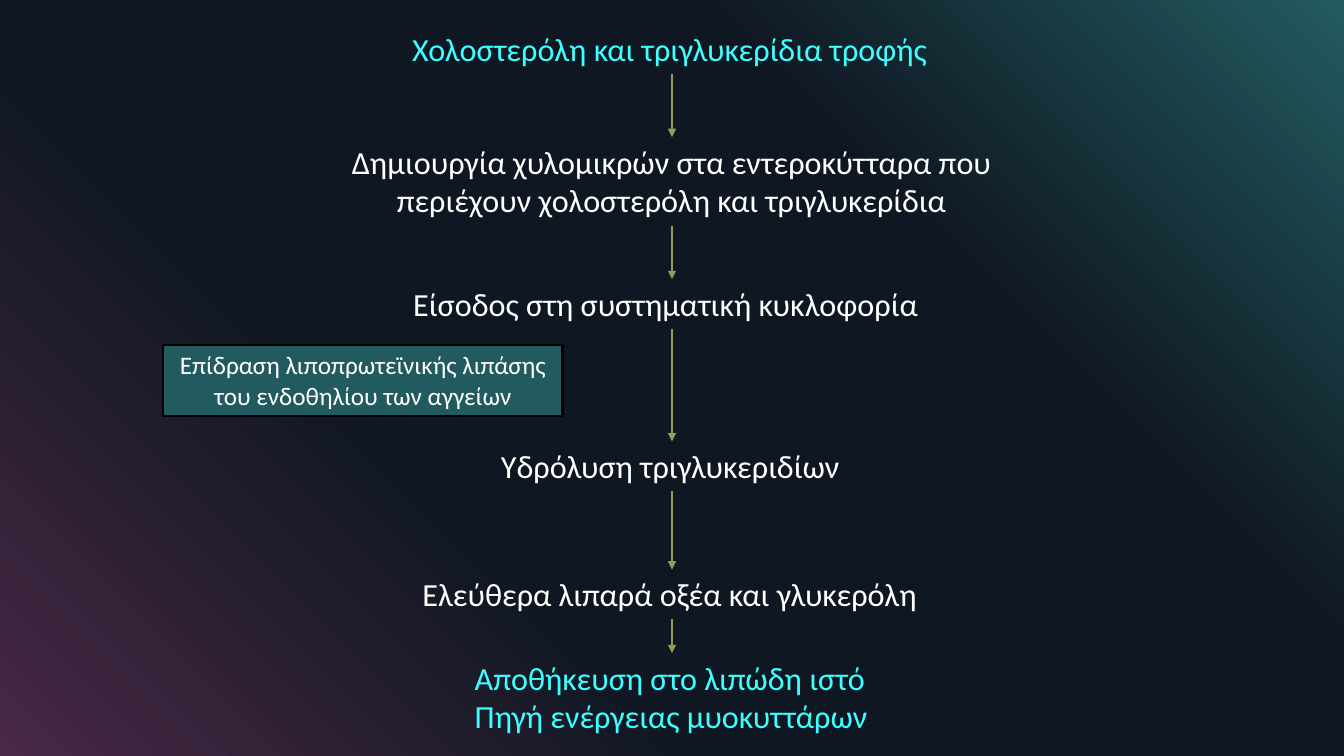
from itertools import pairwise

from lxml import etree
from pptx import Presentation
from pptx.dml.color import RGBColor
from pptx.enum.shapes import MSO_CONNECTOR, MSO_SHAPE
from pptx.enum.text import MSO_ANCHOR, MSO_AUTO_SIZE as AutoSize, PP_ALIGN as Align
from pptx.oxml.ns import qn
from pptx.util import Inches, Pt

SLIDE_W, SLIDE_H = 13.33, 7.5
CENTRE = SLIDE_W / 2
ONE_LINE, TWO_LINES = 0.49, 0.88
FONT = "Calibri"
CYAN, WHITE, TEAL, OLIVE, BLACK = "3DFFFF", "FFFFFF", "225B5F", "969959", "000000"
BACKDROP_STOPS = [(0, "482845"), (34, "0F1722"), (69, "0F1722"), (100, TEAL)]

# Each step: left, top, width, height, colour, wraps and centres, lines
STEPS = [
    (3.99, 0.24, 5.36, ONE_LINE, CYAN, False,
     ["Χολοστερόλη και τριγλυκερίδια τροφής"]),
    (3.15, 1.36, 7.03, TWO_LINES, WHITE, True,
     ["Δημιουργία χυλομικρών στα εντεροκύτταρα που περιέχουν χολοστερόλη και τριγλυκερίδια"]),
    (4.0, 2.77, 5.33, ONE_LINE, WHITE, False,
     ["Είσοδος στη συστηματική κυκλοφορία"]),
    (4.87, 4.38, 3.59, ONE_LINE, WHITE, False,
     ["Υδρόλυση τριγλυκεριδίων"]),
    (4.09, 5.65, 5.15, ONE_LINE, WHITE, False,
     ["Ελεύθερα λιπαρά οξέα και γλυκερόλη"]),
    (4.61, 6.48, 4.11, TWO_LINES, CYAN, False,
     ["Αποθήκευση στο λιπώδη ιστό", "Πηγή ενέργειας μυοκυττάρων"]),
]
ENZYME_BOX = (1.62, 3.42, 3.96, 0.71)
ENZYME = "Επίδραση λιποπρωτεϊνικής λιπάσης του ενδοθηλίου των αγγείων"


def rgb(colour):
    return RGBColor.from_string(colour)


def inches(*lengths):
    return [Inches(length) for length in lengths]


def write(shape, lines, size, colour, align, wrap):
    frame = shape.text_frame
    frame.text = "\n".join(lines)
    frame.word_wrap = wrap
    frame.auto_size = AutoSize.SHAPE_TO_FIT_TEXT
    for paragraph in frame.paragraphs:
        paragraph.alignment = align
        paragraph.font.name = FONT
        paragraph.font.size = Pt(size)
        paragraph.font.color.rgb = rgb(colour)


def add_backdrop(slide, box):
    slide.background.fill.solid()
    slide.background.fill.fore_color.rgb = rgb(BLACK)
    backdrop = slide.shapes.add_shape(MSO_SHAPE.RECTANGLE, *inches(*box))
    backdrop.shadow.inherit = False
    backdrop.line.fill.background()
    backdrop.fill.gradient()
    backdrop.fill.gradient_angle = 45
    # Four stops replace the two default ones
    stops = backdrop._element.spPr.find(".//" + qn("a:gsLst"))
    for default_stop in list(stops):
        stops.remove(default_stop)
    for percent, colour in BACKDROP_STOPS:
        stop = etree.SubElement(stops, qn("a:gs"), pos=str(percent * 1000))
        etree.SubElement(stop, qn("a:srgbClr"), val=colour)


def add_step(slide, box, colour, wrap, lines):
    step = slide.shapes.add_textbox(*inches(*box))
    write(step, lines, 23, colour, Align.CENTER if wrap else Align.LEFT, wrap)


def add_enzyme(slide, box):
    enzyme = slide.shapes.add_shape(MSO_SHAPE.RECTANGLE, *inches(*box))
    enzyme.shadow.inherit = False
    enzyme.fill.solid()
    enzyme.fill.fore_color.rgb = rgb(TEAL)
    enzyme.line.color.rgb = rgb(BLACK)
    enzyme.line.width = Pt(1.5)
    enzyme.text_frame.vertical_anchor = MSO_ANCHOR.TOP
    write(enzyme, [ENZYME], 18, WHITE, Align.CENTER, True)


def add_arrow(slide, top, bottom):
    arrow = slide.shapes.add_connector(
        MSO_CONNECTOR.STRAIGHT, *inches(CENTRE, top, CENTRE, bottom))
    arrow.line.color.rgb = rgb(OLIVE)
    arrow.line.width = Pt(1.5)
    etree.SubElement(arrow.line._get_or_add_ln(), qn("a:tailEnd"), type="triangle")
    etree.SubElement(arrow._element.spPr, qn("a:effectLst"))


def add_flow(slide):
    for *box, colour, wrap, lines in STEPS:
        add_step(slide, box, colour, wrap, lines)
    # An arrow fills the gap between neighbouring steps
    for upper, lower in pairwise(STEPS):
        add_arrow(slide, upper[1] + upper[3], lower[1])


def main():
    deck = Presentation()
    deck.slide_width, deck.slide_height = inches(SLIDE_W, SLIDE_H)
    slide = deck.slides.add_slide(deck.slide_layouts[6])
    add_backdrop(slide, (0, 0, SLIDE_W, SLIDE_H))
    add_flow(slide)
    add_enzyme(slide, ENZYME_BOX)
    deck.save("out.pptx")


if __name__ == "__main__":
    main()
